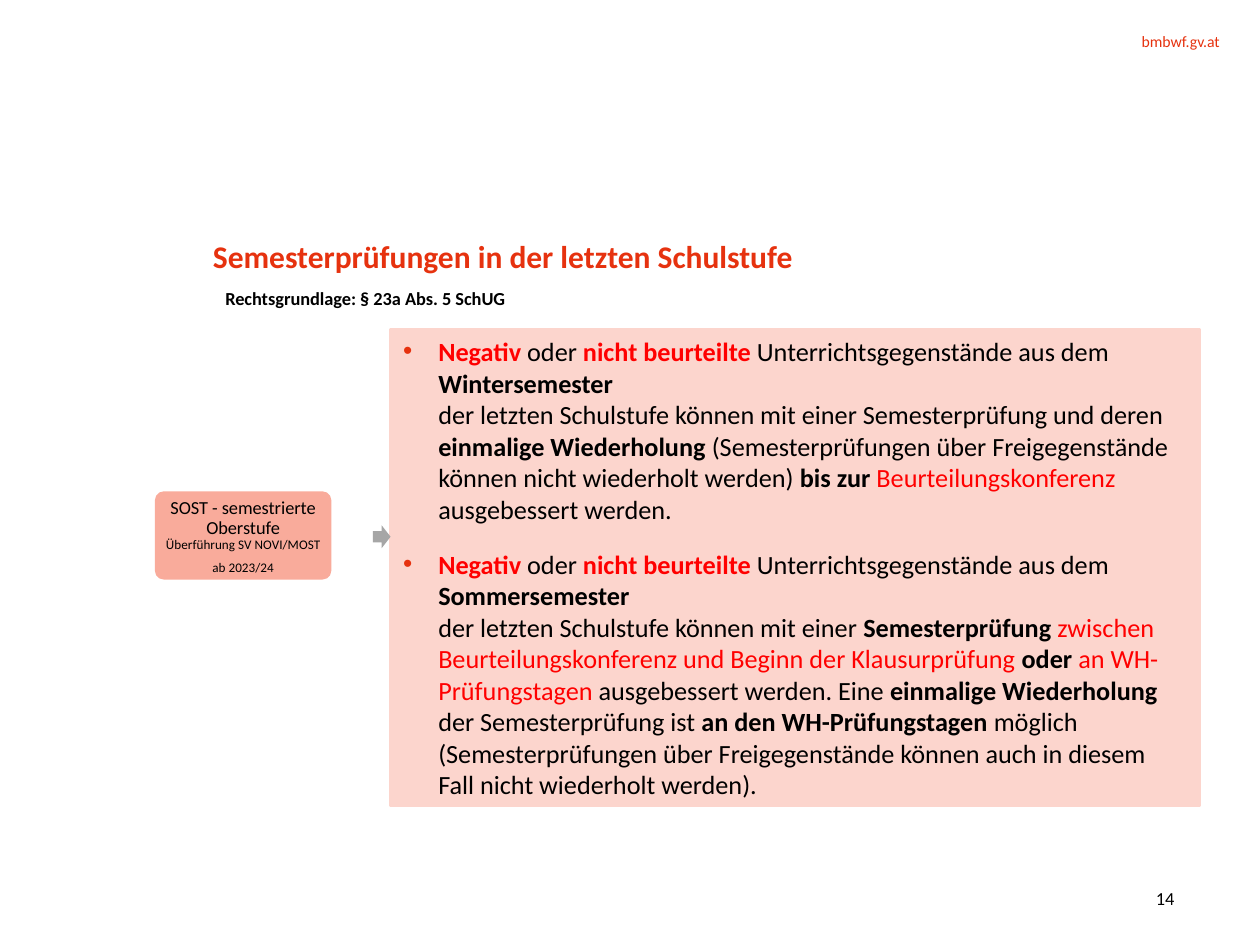
from copy import deepcopy
from dataclasses import dataclass, field

from lxml import etree
from pptx import Presentation
from pptx import util as u
from pptx.dml.color import RGBColor
from pptx.enum import shapes, text
from pptx.oxml import ns

BLACK = RGBColor(0x00, 0x00, 0x00)
RED = RGBColor(0xFF, 0x00, 0x00)
ACCENT = RGBColor(0xE6, 0x32, 0x0F)
PALE = RGBColor(0xFC, 0xD5, 0xCD)
SALMON = RGBColor(0xF9, 0xAB, 0x9B)
GREY = RGBColor(0xA6, 0xA6, 0xA6)
FONT = "Calibri"
SHAPE = shapes.MSO_SHAPE
ALIGN = text.PP_ALIGN
ANCHOR = text.MSO_ANCHOR


@dataclass
class Span:
    words: str
    size: float = 15
    color: RGBColor = BLACK
    bold: bool = False
    line_break: bool = False


@dataclass
class Para:
    spans: list[Span]
    format: dict = field(default_factory=dict)
    bullet: bool = False


@dataclass
class Area:
    left: float
    top: float
    width: float
    height: float

    def lengths(self) -> list[u.Length]:
        return [u.Inches(n) for n in (self.left, self.top, self.width, self.height)]


def apply(target, values: dict) -> None:
    for name, value in values.items():
        setattr(target, name, value)


def add_bullet(para) -> None:
    props = para._p.get_or_add_pPr()
    props.set("marL", str(u.Inches(0.28)))
    props.set("indent", str(-u.Inches(0.28)))
    color = etree.SubElement(props, ns.qn("a:buClr"))
    etree.SubElement(color, ns.qn("a:srgbClr"), val=str(ACCENT))
    etree.SubElement(props, ns.qn("a:buFont"), typeface="Arial")
    etree.SubElement(props, ns.qn("a:buChar"), char="•")


def write(box, paras: list[Para], anchor=ANCHOR.TOP, inset: float | None = None) -> None:
    frame = box.text_frame
    apply(frame, {"word_wrap": True, "vertical_anchor": anchor})
    if inset is not None:
        sides = ("left", "top", "right", "bottom")
        apply(frame, {f"margin_{side}": u.Inches(inset) for side in sides})
    for index, content in enumerate(paras):
        para = frame.add_paragraph() if index else frame.paragraphs[0]
        apply(para, {"alignment": ALIGN.LEFT} | content.format)
        if content.bullet:
            add_bullet(para)
        for span in content.spans:
            run = para.add_run()
            run.text = span.words
            apply(run.font, {"name": FONT, "size": u.Pt(span.size), "bold": span.bold})
            run.font.color.rgb = span.color
            if span.line_break:
                para.add_line_break()
                para._p[-1].append(deepcopy(run._r.rPr))


def add_text(page, area: Area, paras: list[Para], **options) -> None:
    write(page.shapes.add_textbox(*area.lengths()), paras, **options)


def add_block(page, kind, area: Area, fill: RGBColor):
    block = page.shapes.add_shape(kind, *area.lengths())
    block.shadow.inherit = False
    block.fill.solid()
    block.fill.fore_color.rgb = fill
    block.line.fill.background()
    return block


def rule(semester: str, rest: list[Span]) -> Para:
    opening = [
        Span("Negativ", color=RED, bold=True),
        Span(" oder "),
        Span("nicht beurteilte ", color=RED, bold=True),
        Span("Unterrichtsgegenstände aus dem "),
        Span(semester, bold=True, line_break=True),
    ]
    return Para(opening + rest, {"space_after": u.Pt(13.5)}, bullet=True)


WINTER = [
    Span("der letzten Schulstufe können mit einer Semesterprüfung und deren "),
    Span("einmalige Wiederholung ", bold=True),
    Span("(Semesterprüfungen über Freigegenstände können nicht wiederholt werden) "),
    Span("bis zur ", bold=True),
    Span("Beurteilungskonferenz", color=RED),
    Span(" ausgebessert werden."),
]
SUMMER = [
    Span("der letzten Schulstufe können mit einer"),
    Span(" Semesterprüfung ", bold=True),
    Span("zwischen Beurteilungskonferenz und Beginn der Klausurprüfung ", color=RED),
    Span("oder ", bold=True),
    Span("an WH-Prüfungstagen ", color=RED),
    Span("ausgebessert werden. Eine "),
    Span("einmalige Wiederholung ", bold=True),
    Span("der Semesterprüfung ist "),
    Span("an den WH-Prüfungstagen ", bold=True),
    Span("möglich (Semesterprüfungen über Freigegenstände können auch in diesem "
         "Fall nicht wiederholt werden)."),
]


def main() -> None:
    deck = Presentation()
    apply(deck, {"slide_width": u.Inches(10), "slide_height": u.Inches(7.5)})
    page = deck.slides.add_slide(deck.slide_layouts[6])
    right = {"alignment": ALIGN.RIGHT}

    add_text(page, Area(7.27, 0.25, 2.41, 0.15),
             [Para([Span("bmbwf.gv.at", 9, ACCENT)], right)], inset=0)
    add_text(page, Area(8.43, 6.98, 0.89, 0.29),
             [Para([Span("14", 10.5)], right)], anchor=ANCHOR.MIDDLE, inset=0)

    rules = add_block(page, SHAPE.RECTANGLE, Area(3.1, 2.62, 6.42, 3.77), PALE)
    rules.line.color.rgb = PALE
    rules.line.width = u.Pt(2.08)
    write(rules, [rule("Wintersemester", WINTER), rule("Sommersemester", SUMMER)],
          anchor=ANCHOR.MIDDLE)
    add_block(page, SHAPE.RIGHT_ARROW, Area(2.96, 4.17, 0.14, 0.18), GREY)

    add_text(page, Area(1.69, 2.23, 4.97, 0.28),
             [Para([Span("Rechtsgrundlage: § 23a Abs. 5 SchUG", 10.5, bold=True)])])
    add_text(page, Area(1.69, 1.87, 6.54, 0.68),
             [Para([Span("Semesterprüfungen in der letzten Schulstufe", 18, ACCENT, True)],
                   {"line_spacing": u.Pt(22.5)})], inset=0)

    card = add_block(page, SHAPE.ROUNDED_RECTANGLE, Area(1.23, 3.9, 1.4, 0.7), SALMON)
    card.adjustments[0] = 0.1
    centred = {"alignment": ALIGN.CENTER, "line_spacing": 0.9, "space_after": u.Pt(5)}
    add_text(page, Area(1.25, 3.93, 1.36, 0.66), [
        Para([Span("SOST - semestrierte Oberstufe", 10.5, line_break=True),
              Span("Überführung SV NOVI/MOST", 7.5)], centred),
        Para([Span("ab 2023/24", 7.5)], centred),
    ], anchor=ANCHOR.MIDDLE, inset=0.01)

    deck.save("out.pptx")


if __name__ == "__main__":
    main()
